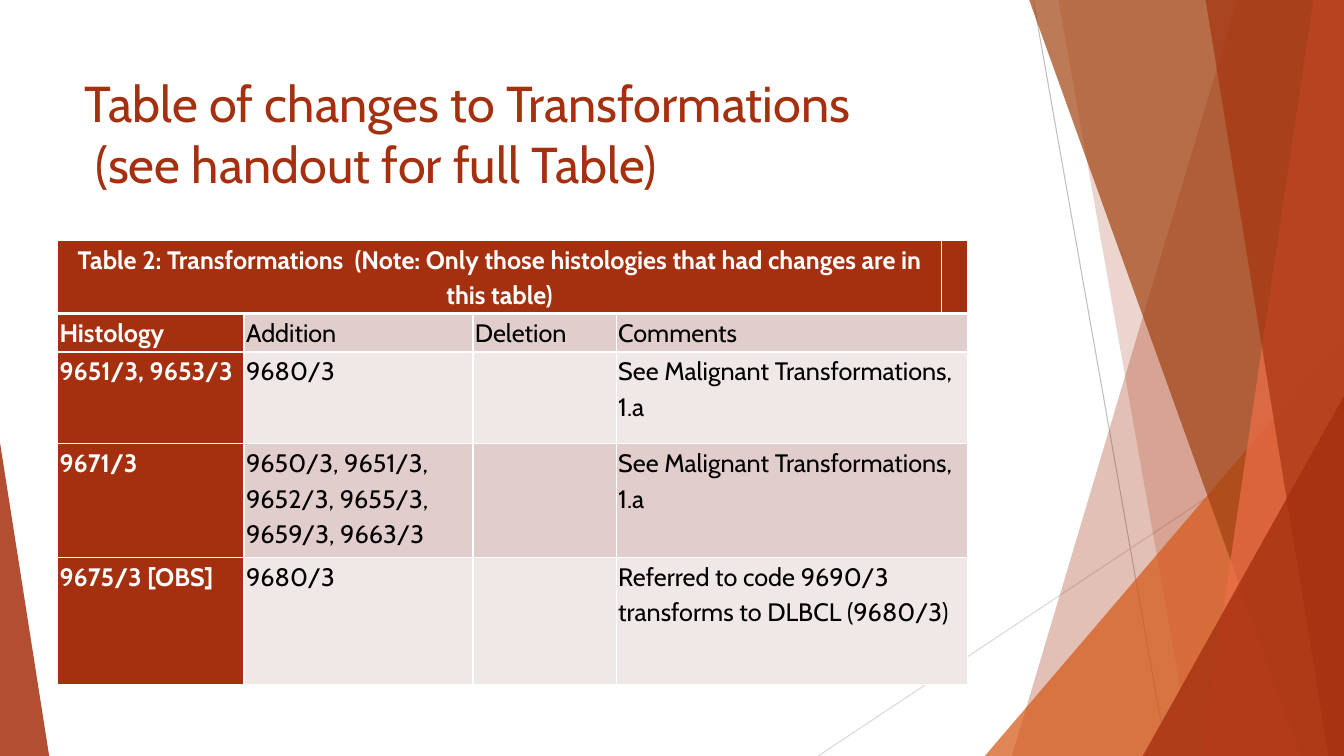
import pptx
import pptx.dml.color
import pptx.enum.shapes
import pptx.enum.text
import pptx.oxml.ns
import pptx.util
from lxml import etree
from pptx.util import Cm, Pt

WIDTH, HEIGHT = 33.87, 19.05
FONT = "Cabin"
RUST, WHITE, BLACK = "A5300F", "FFFFFF", "000000"
BANDS = ["E1CDCC", "F0E8E7"]
CAPTION = "Table 2: Transformations  (Note: Only those histologies that had changes are in this table)"
ROWS = [
    ["Histology", "Addition", "Deletion", "Comments"],
    ["9651/3, 9653/3", "9680/3", "", "See Malignant Transformations, 1.a"],
    ["9671/3", "9650/3, 9651/3, 9652/3, 9655/3, 9659/3, 9663/3", "",
     "See Malignant Transformations, 1.a"],
    ["9675/3 [OBS]", "9680/3", "", "Referred to code 9690/3 transforms to DLBCL (9680/3)"],
]
COL_WIDTHS = [4.7, 5.77, 3.61, 8.2, 0.66]
ROW_HEIGHTS = [1.85, 0.97, 2.31, 2.87, 3.2]


def rgb(color):
    return pptx.dml.color.RGBColor.from_string(color)


def sub(parent, tag, **attrs):
    return etree.SubElement(parent, pptx.oxml.ns.qn(tag), attrs)


def set_font(p, size, color, bold=False):
    p.font.name = FONT
    p.font.size = Pt(size)
    p.font.bold = bold
    p.font.color.rgb = rgb(color)


def paint(sp, color, opacity):
    sp.shadow.inherit = False
    sp.line.fill.background()
    sp.fill.solid()
    sp.fill.fore_color.rgb = rgb(color)
    clr = sp._element.spPr.find(pptx.oxml.ns.qn("a:solidFill"))[0]
    sub(clr, "a:alpha", val=str(opacity * 1000))


def add_line(s, x1, y1, x2, y2, color):
    line = s.shapes.add_connector(
        pptx.enum.shapes.MSO_CONNECTOR.STRAIGHT, Cm(x1), Cm(y1), Cm(x2), Cm(y2))
    line.line.color.rgb = rgb(color)
    line.line.width = Pt(0.75)
    sub(line._element.spPr, "a:effectLst")


def add_band(s, top_x, bottom_x, color, opacity):
    builder = s.shapes.build_freeform(Cm(top_x), Cm(-0.02))
    corners = [(WIDTH, -0.02), (WIDTH, HEIGHT), (bottom_x, HEIGHT)]
    builder.add_line_segments([(Cm(x), Cm(y)) for x, y in corners], close=True)
    paint(builder.convert_to_shape(), color, opacity)


def add_triangle(s, left, top, width, apex, color, opacity):
    sp = s.shapes.add_shape(
        pptx.enum.shapes.MSO_SHAPE.ISOSCELES_TRIANGLE,
        Cm(left), Cm(top), Cm(width), Cm(HEIGHT - top))
    sp.adjustments[0] = apex
    paint(sp, color, opacity)


def add_decoration(s):
    add_line(s, 26.04, 0, 29.41, HEIGHT, "BFBFBF")
    add_line(s, WIDTH, 10.24, 20.62, HEIGHT, "D9D9D9")
    add_band(s, 31.19, 25.5, RUST, 30)
    add_band(s, 26.67, 30.05, RUST, 20)
    add_triangle(s, 24.82, 8.46, 9.05, 1, "D55816", 72)
    add_band(s, 25.93, 32.79, "A04210", 70)
    add_band(s, 33.1, 30.28, "EE6E4A", 70)
    add_band(s, 30.38, 33.48, RUST, 65)
    add_triangle(s, 28.8, 9.98, 5.07, 1, RUST, 80)
    add_triangle(s, 0, 11.15, 1.24, 0, RUST, 85)


def format_title(s, text):
    title = s.shapes.title
    s.shapes._spTree.append(title._element)
    title.left, title.top, title.width, title.height = Cm(1.88), Cm(1.7), Cm(23.88), Cm(3.66)
    tf = title.text_frame
    tf.text = text
    tf.word_wrap = True
    tf.auto_size = pptx.enum.text.MSO_AUTO_SIZE.NONE
    tf.vertical_anchor = pptx.enum.text.MSO_ANCHOR.TOP
    p = tf.paragraphs[0]
    p.alignment = pptx.enum.text.PP_ALIGN.LEFT
    set_font(p, 36, RUST)


def set_borders(cell, **widths):
    tcPr = cell._tc.get_or_add_tcPr()
    for side in "LRTB":
        ln = sub(tcPr, f"a:ln{side}", w=str(Pt(widths.get(side, 1))))
        sub(sub(ln, "a:solidFill"), "a:srgbClr", val=WHITE)


def format_cell(cell, row, col):
    heading = row == 0 or col == 0
    set_borders(cell, **{0: {"B": 3}, 1: {"T": 3}}.get(row, {}))
    cell.fill.solid()
    cell.fill.fore_color.rgb = rgb(RUST if heading else BANDS[(row - 1) % 2])
    cell.margin_left = cell.margin_right = Cm(0.05)
    cell.margin_top = cell.margin_bottom = 0
    p = cell.text_frame.paragraphs[0]
    p.alignment = pptx.enum.text.PP_ALIGN.CENTER if row == 0 else pptx.enum.text.PP_ALIGN.LEFT
    p.line_spacing = 1.15
    p.space_after = Pt(10)
    set_font(p, 18, WHITE if heading else BLACK, heading)


def add_changes_table(s):
    table = s.shapes.add_table(
        len(ROW_HEIGHTS), len(COL_WIDTHS), Cm(1.45), Cm(6.05),
        Cm(sum(COL_WIDTHS)), Cm(sum(ROW_HEIGHTS))).table
    table.first_row = table.horz_banding = False
    for column, width in zip(table.columns, COL_WIDTHS):
        column.width = Cm(width)
    for row, height in zip(table.rows, ROW_HEIGHTS):
        row.height = Cm(height)
    for r, texts in enumerate([[CAPTION]] + ROWS):
        for c, text in enumerate(texts):
            table.cell(r, c).text = text
        for c in range(len(COL_WIDTHS)):
            format_cell(table.cell(r, c), r, c)
        if r == 0:
            table.cell(r, 0).merge(table.cell(r, 3))
        else:
            table.cell(r, 3).merge(table.cell(r, 4))


def main():
    prs = pptx.Presentation()
    prs.slide_width, prs.slide_height = Cm(WIDTH), Cm(HEIGHT)
    s = prs.slides.add_slide(prs.slide_layouts[5])
    add_decoration(s)
    format_title(s, "Table of changes to Transformations\v (see handout for full Table)")
    add_changes_table(s)
    prs.save("out.pptx")


if __name__ == "__main__":
    main()
